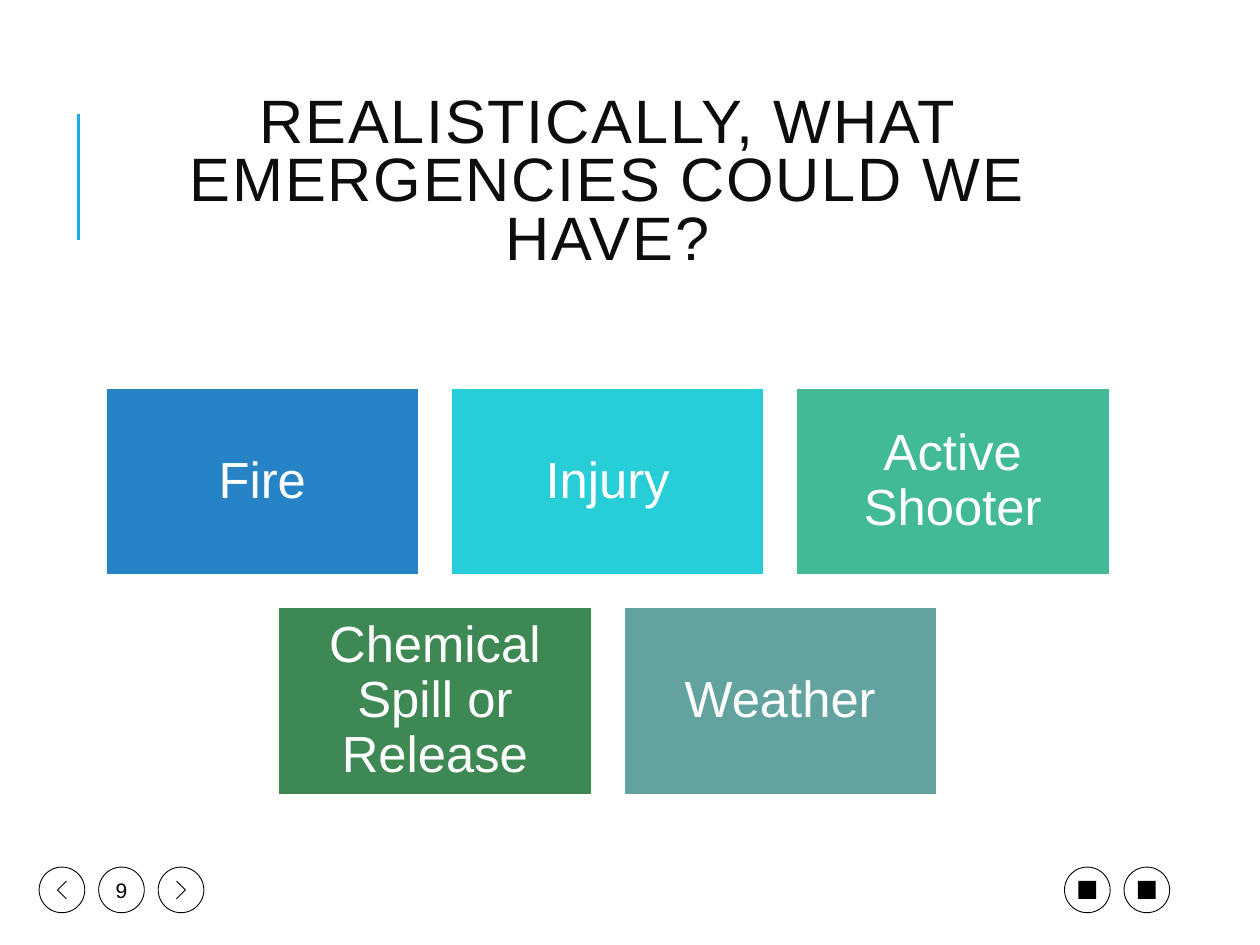
from lxml import etree
from pptx import Presentation
from pptx.dml.color import RGBColor
from pptx.enum.shapes import MSO_CONNECTOR, MSO_SHAPE
from pptx.enum.text import MSO_ANCHOR, MSO_AUTO_SIZE, PP_ALIGN
from pptx.oxml.ns import qn
from pptx.util import Cm, Pt

RECTANGLE, OVAL = MSO_SHAPE.RECTANGLE, MSO_SHAPE.OVAL
STRAIGHT = MSO_CONNECTOR.STRAIGHT
MIDDLE, CENTER = MSO_ANCHOR.MIDDLE, PP_ALIGN.CENTER
NO_AUTOFIT = MSO_AUTO_SIZE.NONE

FONT = "Arial"
TILES_PER_ROW = 3
TILE_GAP = 0.64
CIRCLE_SIZE = 0.92
CIRCLE_STEP = 1.2
TILES = [
    ("Fire", "2683C6"),
    ("Injury", "27CED7"),
    ("Active Shooter", "42BA97"),
    ("Chemical Spill or Release", "3E8853"),
    ("Weather", "62A39F"),
]


def color(hex_string):
    return RGBColor.from_string(hex_string)


def style_shape(shape, fill=None, line=None, line_width=0.5):
    shape.shadow.inherit = False
    if fill:
        shape.fill.solid()
        shape.fill.fore_color.rgb = color(fill)
    else:
        shape.fill.background()
    if line:
        shape.line.color.rgb = color(line)
        shape.line.width = Pt(line_width)
    else:
        shape.line.fill.background()


def write_text(shape, text, size, hex_string, line_spacing, margin):
    text_frame = shape.text_frame
    text_frame.text = text
    text_frame.word_wrap = True
    text_frame.auto_size = NO_AUTOFIT
    text_frame.vertical_anchor = MIDDLE
    text_frame.margin_left = text_frame.margin_right = Cm(margin)
    text_frame.margin_top = text_frame.margin_bottom = Cm(margin)
    paragraph = text_frame.paragraphs[0]
    paragraph.alignment = CENTER
    paragraph.line_spacing = line_spacing
    run = paragraph.runs[0]
    run.font.name = FONT
    run.font.size = Pt(size)
    run.font.color.rgb = color(hex_string)
    return run


def add_title(slide, left, top, width, height):
    title = slide.shapes.title
    title.left, title.top = Cm(left), Cm(top)
    title.width, title.height = Cm(width), Cm(height)
    text = "REALISTICALLY, WHAT EMERGENCIES COULD WE HAVE?"
    run = write_text(title, text, 35, "0D0D0D", 0.8, 0.2)
    run.font._element.set("spc", "100")


def add_accent_line(slide, left, top, height):
    line = slide.shapes.add_connector(
        STRAIGHT, Cm(left), Cm(top + height), Cm(left), Cm(top))
    line.line.color.rgb = color("1CADE4")
    line.line.width = Pt(1.5)
    etree.SubElement(line._element.spPr, qn("a:effectLst"))


def add_tiles(slide, left, top, width, height):
    tile_width = (width - (TILES_PER_ROW - 1) * TILE_GAP) / TILES_PER_ROW
    tile_height = (height - TILE_GAP) / 2
    for row in range(2):
        tiles = TILES[row * TILES_PER_ROW:(row + 1) * TILES_PER_ROW]
        row_width = len(tiles) * (tile_width + TILE_GAP) - TILE_GAP
        row_left = left + (width - row_width) / 2
        row_top = top + row * (tile_height + TILE_GAP)
        for column, (label, fill) in enumerate(tiles):
            tile = slide.shapes.add_shape(
                RECTANGLE, Cm(row_left + column * (tile_width + TILE_GAP)),
                Cm(row_top), Cm(tile_width), Cm(tile_height))
            style_shape(tile, fill, "FFFFFF", 1.25)
            write_text(tile, label, 29, "FFFFFF", 0.9, 0.3)


def add_circle(slide, left, top):
    circle = slide.shapes.add_shape(
        OVAL, Cm(left), Cm(top), Cm(CIRCLE_SIZE), Cm(CIRCLE_SIZE))
    style_shape(circle, line="000000")
    return circle


def add_chevron(slide, center_x, center_y, direction):
    tip = center_x + direction * 0.09
    back = center_x - direction * 0.09
    builder = slide.shapes.build_freeform(Cm(back), Cm(center_y - 0.18))
    builder.add_line_segments(
        [(Cm(tip), Cm(center_y)), (Cm(back), Cm(center_y + 0.18))], close=False)
    style_shape(builder.convert_to_shape(), line="000000")


def add_navigation(slide, left, top):
    middle = CIRCLE_SIZE / 2
    circles = [add_circle(slide, left + index * CIRCLE_STEP, top) for index in range(3)]
    write_text(circles[1], "9", 12, "000000", 1, 0)
    add_chevron(slide, left + middle, top + middle, -1)
    add_chevron(slide, left + 2 * CIRCLE_STEP + middle, top + middle, 1)


def add_social_buttons(slide, left, top):
    mark_size = 0.36
    inset = (CIRCLE_SIZE - mark_size) / 2
    for index in range(2):
        button_left = left + index * CIRCLE_STEP
        add_circle(slide, button_left, top)
        mark = slide.shapes.add_shape(
            RECTANGLE, Cm(button_left + inset), Cm(top + inset),
            Cm(mark_size), Cm(mark_size))
        style_shape(mark, fill="000000")


def main():
    presentation = Presentation()
    presentation.slide_width, presentation.slide_height = Cm(25.4), Cm(19.05)
    slide = presentation.slides.add_slide(presentation.slide_layouts[5])
    add_navigation(slide, 0.79, 17.48)
    add_social_buttons(slide, 21.46, 17.48)
    add_accent_line(slide, 1.58, 2.3, 2.54)
    add_title(slide, 2.13, 1.63, 20.24, 4.17)
    add_tiles(slide, 2.13, 7.82, 20.24, 8.2)
    presentation.save("out.pptx")


if __name__ == "__main__":
    main()
